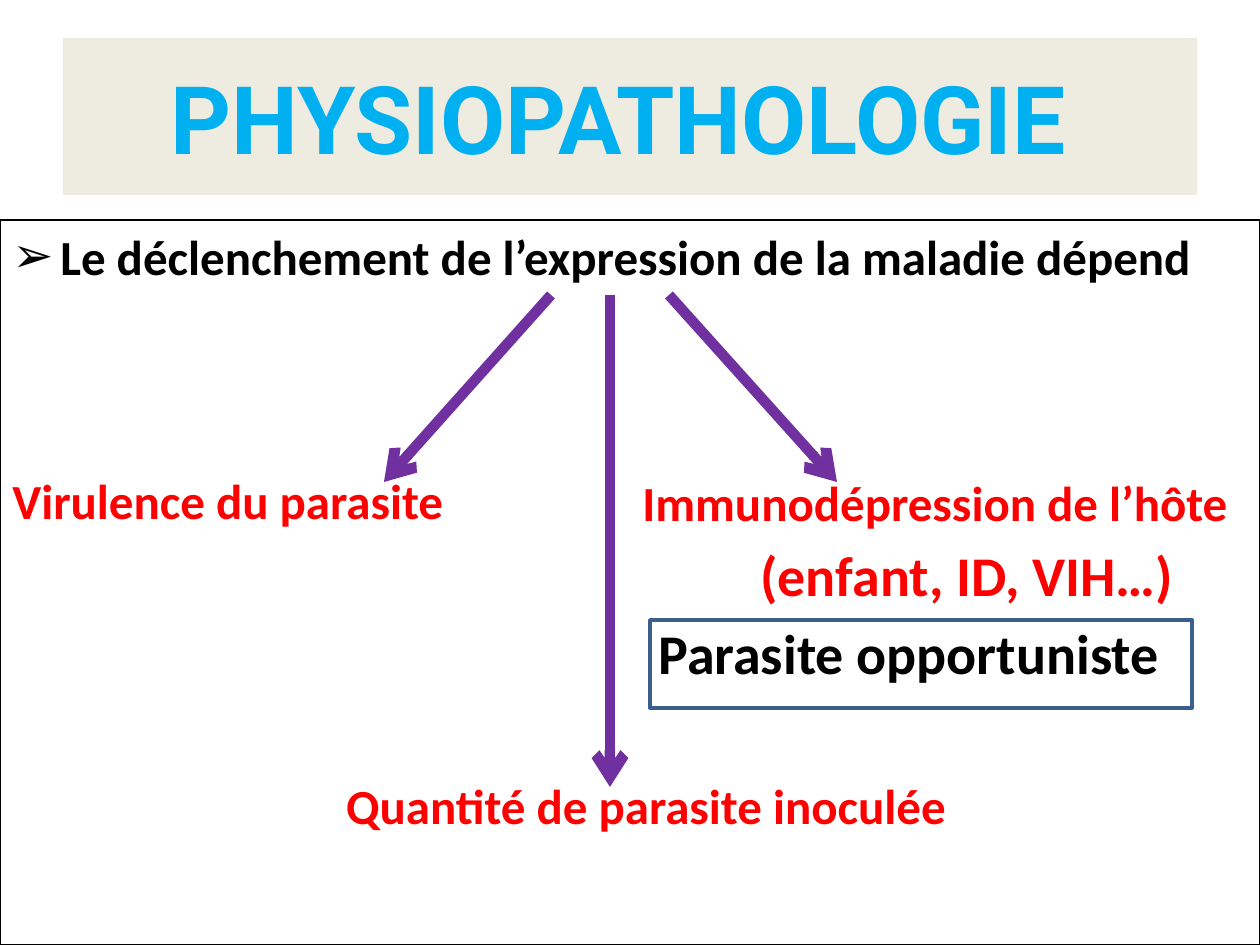
from lxml import etree
from pptx import Presentation
from pptx.dml.color import RGBColor
from pptx.enum import shapes, text
from pptx.oxml import ns
from pptx import util as u

PX = u.Inches(1) // 126
CREAM = RGBColor(0xEE, 0xEC, 0xE1)
SKY = RGBColor(0x00, 0xB0, 0xF0)
BLACK = RGBColor(0x00, 0x00, 0x00)
RED = RGBColor(0xFF, 0x00, 0x00)
PURPLE = RGBColor(0x70, 0x30, 0xA0)
BLUE = RGBColor(0x3A, 0x5F, 0x8C)

LEFT, CENTER = text.PP_ALIGN.LEFT, text.PP_ALIGN.CENTER
TOP, MIDDLE = text.MSO_ANCHOR.TOP, text.MSO_ANCHOR.MIDDLE

TITLE = [
    dict(words="PHYSIOPATHOLOGIE ", size=54, color=SKY, font="Roboto", align=CENTER),
]
BODY = [
    dict(words="Le déclenchement de l’expression de la maladie dépend",
         margin=48, indent=-48, bullet="➢"),
    dict(words="Virulence du parasite", color=RED, before=106),
    dict(words="(enfant, ID, VIH…)", size=32, color=RED, before=6.4, margin=748),
    dict(words="Parasite opportuniste", size=32, before=6.4, margin=646),
    dict(words="Quantité de parasite inoculée", color=RED, before=51,
         margin=32, align=CENTER),
]
HOST = [dict(words="Immunodépression de l’hôte", color=RED)]
PANELS = [
    dict(place=(63, 38, 1134, 157), fill=CREAM, anchor=MIDDLE, lines=TITLE),
    dict(place=(0, 220, 1260, 725), line=BLACK, width=0.75, lines=BODY),
    dict(place=(630, 466, 630, 72), lines=HOST),
    dict(place=(650, 620, 542, 88), line=BLUE, width=2),
]
ARROW_TOP = 295
ARROWS = [(669, 837, 482), (551, 384, 482), (610, 610, 787)]


def add_child(parent, tag, **attributes):
    return etree.SubElement(parent, ns.qn(tag), attributes)


def add_panel(page, place, fill=None, line=None, width=0, anchor=TOP, lines=()):
    box = page.shapes.add_shape(shapes.MSO_SHAPE.RECTANGLE, *(n * PX for n in place))
    box.shadow.inherit = False
    for part, color in ((box.fill, fill), (box.line.fill, line)):
        if color is None:
            part.background()
        else:
            part.solid()
            part.fore_color.rgb = color
    if line is not None:
        box.line.width = u.Pt(width)
    frame = box.text_frame
    frame.word_wrap = True
    frame.vertical_anchor = anchor
    for number, entry in enumerate(lines):
        para = frame.add_paragraph() if number else frame.paragraphs[0]
        write_line(para, **entry)


def write_line(para, words, size=28, color=BLACK, font="Calibri", align=LEFT,
               before=0, margin=0, indent=0, bullet=None):
    para.alignment = align
    para.space_before = u.Pt(before)
    props = para._p.get_or_add_pPr()
    props.set("marL", str(margin * PX))
    props.set("indent", str(indent * PX))
    if bullet:
        add_child(props, "a:buFont", typeface=font)
        add_child(props, "a:buChar", char=bullet)
    span = para.add_run()
    span.text = words
    for name, value in dict(name=font, size=u.Pt(size), bold=True).items():
        setattr(span.font, name, value)
    span.font.color.rgb = color


def add_arrow(page, start, end, bottom):
    arrow = page.shapes.add_connector(
        shapes.MSO_CONNECTOR.STRAIGHT,
        *(n * PX for n in (start, ARROW_TOP, end, bottom)))
    arrow.line.color.rgb = PURPLE
    arrow.line.width = u.Pt(6)
    add_child(arrow.line._get_or_add_ln(), "a:tailEnd", type="arrow")
    add_child(arrow._element.spPr, "a:effectLst")


def main():
    deck = Presentation()
    deck.slide_width, deck.slide_height = 1260 * PX, 945 * PX
    page = deck.slides.add_slide(deck.slide_layouts[6])
    for panel in PANELS:
        add_panel(page, **panel)
    for arrow in ARROWS:
        add_arrow(page, *arrow)
    deck.save("out.pptx")


if __name__ == "__main__":
    main()
